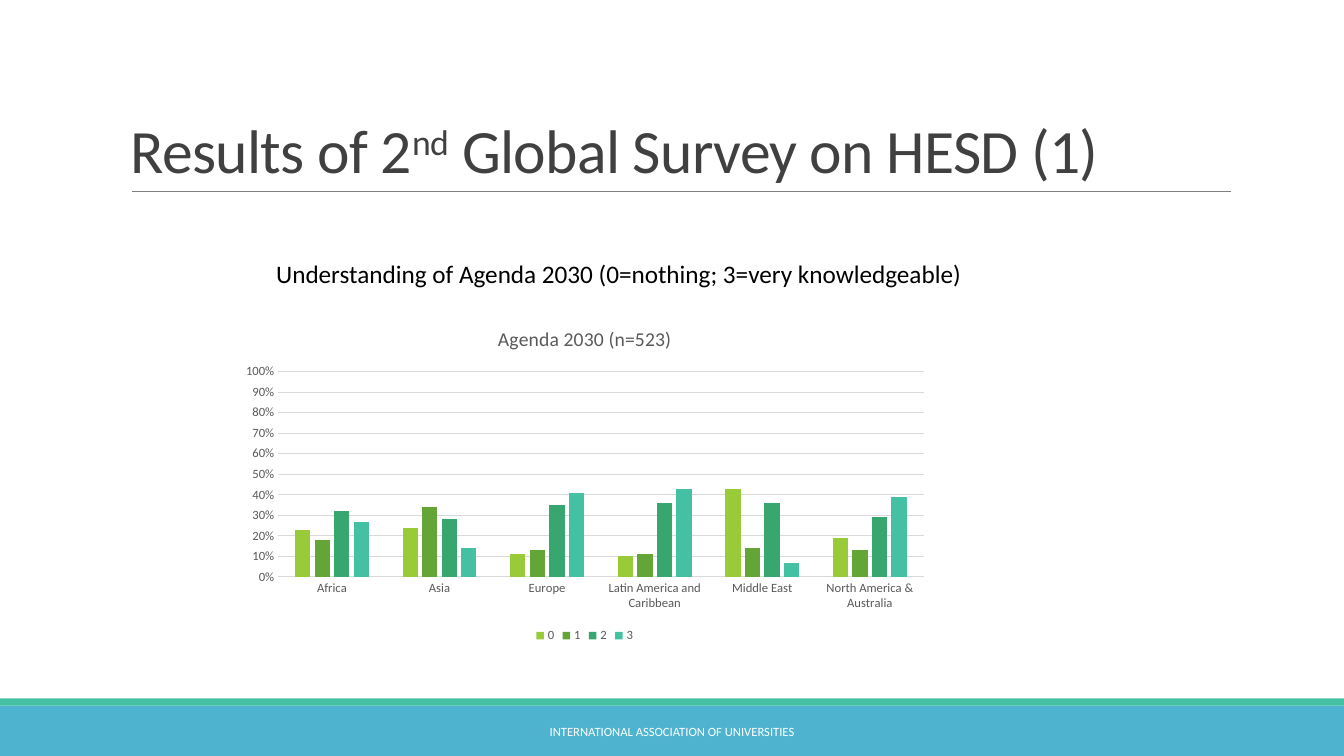
from lxml import etree
from pptx import Presentation
from pptx.chart.data import CategoryChartData
from pptx.dml.color import RGBColor
from pptx.enum.chart import XL_CHART_TYPE, XL_LEGEND_POSITION, XL_TICK_MARK
from pptx.enum.shapes import MSO_CONNECTOR, MSO_SHAPE
from pptx.enum.text import MSO_ANCHOR, PP_ALIGN
from pptx.oxml.ns import qn
from pptx.util import Inches, Pt

FONT = "Calibri"
COLORS = {
    "blue": "4EB3CF", "teal": "44C1A3", "rule": "808080", "title": "404040",
    "white": "FFFFFF", "black": "000000", "label": "595959", "grid": "D9D9D9",
    "lime": "99CB38", "green": "63A537", "jade": "37A76F",
}


def style(font, size, color):
    font.name = FONT
    font.size = Pt(size)
    font.bold = False
    font.color.rgb = RGBColor.from_string(COLORS[color])


def add_text(left, top, width, height, parts, size, color, anchor):
    box = slide.shapes.add_textbox(
        Inches(left), Inches(top), Inches(width), Inches(height))
    frame = box.text_frame
    frame.word_wrap = True
    frame.vertical_anchor = anchor
    para = frame.paragraphs[0]
    for part in parts:
        run = para.add_run()
        run.text = part
        style(run.font, size, color)
    return para


deck = Presentation()
deck.slide_width = Inches(13.33)
deck.slide_height = Inches(7.5)
slide = deck.slides.add_slide(deck.slide_layouts[6])

# Footer bands
for top, height, color in [(7, 0.5, "blue"), (6.93, 0.07, "teal")]:
    band = slide.shapes.add_shape(
        MSO_SHAPE.RECTANGLE, 0, Inches(top), deck.slide_width, Inches(height))
    band.shadow.inherit = False
    band.fill.solid()
    band.fill.fore_color.rgb = RGBColor.from_string(COLORS[color])
    band.line.fill.background()

# Rule under the title
rule = slide.shapes.add_connector(
    MSO_CONNECTOR.STRAIGHT, Inches(1.31), Inches(1.9), Inches(12.21), Inches(1.9))
rule.line.color.rgb = RGBColor.from_string(COLORS["rule"])
rule.line.width = Pt(0.5)
etree.SubElement(rule._element.spPr, qn("a:effectLst"))

# Title with a raised ordinal
title = add_text(1.2, 0.31, 11, 1.59,
                 ["Results of 2", "nd", " Global Survey on HESD (1)"],
                 44, "title", MSO_ANCHOR.BOTTOM)
title.line_spacing = 0.85
for run in title.runs:
    run.font._element.set("spc", "-50")
title.runs[1].font._element.set("baseline", "30000")

# Footer and subtitle
footer = add_text(4.03, 7.06, 5.27, 0.4,
                  ["INTERNATIONAL ASSOCIATION OF UNIVERSITIES"],
                  9, "white", MSO_ANCHOR.MIDDLE)
footer.alignment = PP_ALIGN.CENTER
add_text(2.64, 2.51, 7.69, 0.4,
         ["Understanding of Agenda 2030 (0=nothing; 3=very knowledgeable)"],
         18, "black", MSO_ANCHOR.TOP)

# Chart data
data = CategoryChartData(number_format="0%")
data.categories = ["Africa", "Asia", "Europe", "Latin America and Caribbean",
                   "Middle East", "North America & Australia"]
levels = [
    ("0", "lime", [0.23, 0.24, 0.11, 0.1, 0.43, 0.19]),
    ("1", "green", [0.18, 0.34, 0.13, 0.11, 0.14, 0.13]),
    ("2", "jade", [0.32, 0.28, 0.35, 0.36, 0.36, 0.29]),
    ("3", "teal", [0.27, 0.14, 0.41, 0.43, 0.07, 0.39]),
]
for name, color, values in levels:
    data.add_series(name, values)

# Chart with title and legend
chart = slide.shapes.add_chart(
    XL_CHART_TYPE.COLUMN_CLUSTERED, Inches(2.3), Inches(3.07),
    Inches(7), Inches(3.35), data).chart
style(chart.font, 10, "black")
chart.has_title = True
head = chart.chart_title.text_frame
head.text = "Agenda 2030 (n=523)"
style(head.paragraphs[0].runs[0].font, 14, "label")
chart.chart_title.include_in_layout = False
chart.has_legend = True
chart.legend.position = XL_LEGEND_POSITION.BOTTOM
chart.legend.include_in_layout = False
style(chart.legend.font, 9, "label")

# Columns
plot = chart.plots[0]
plot.gap_width = 219
plot.overlap = -27
plot.vary_by_categories = False
for series, (name, color, values) in zip(plot.series, levels):
    series.format.fill.solid()
    series.format.fill.fore_color.rgb = RGBColor.from_string(COLORS[color])

# Axes and grid
for axis in (chart.category_axis, chart.value_axis):
    axis.major_tick_mark = XL_TICK_MARK.NONE
    axis.minor_tick_mark = XL_TICK_MARK.NONE
    style(axis.tick_labels.font, 9, "label")
scale = chart.value_axis
scale.minimum_scale = 0
scale.maximum_scale = 1
scale.major_unit = 0.1
scale.tick_labels.number_format = "0%"
scale.tick_labels.number_format_is_linked = False
scale.format.line.fill.background()
scale.has_major_gridlines = True
for line in (chart.category_axis.format.line, scale.major_gridlines.format.line):
    line.color.rgb = RGBColor.from_string(COLORS["grid"])
    line.width = Pt(0.75)

deck.save("out.pptx")
